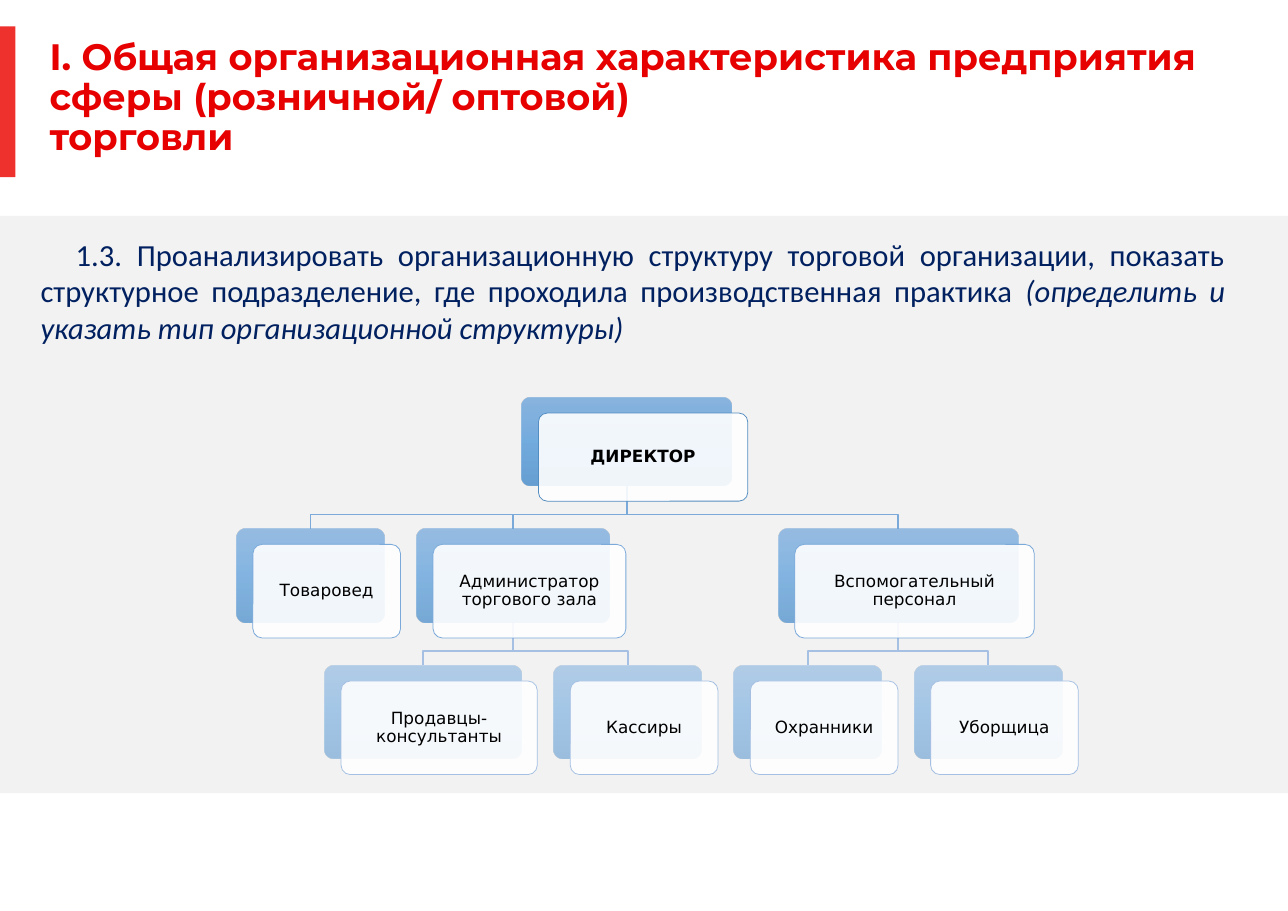
"""Build a slide with the organisation chart of a trading enterprise."""
from copy import deepcopy

from lxml import etree
from pptx import Presentation
from pptx.dml.color import RGBColor
from pptx.enum.shapes import MSO_SHAPE
from pptx.enum.text import MSO_ANCHOR, PP_ALIGN
from pptx.oxml.ns import qn
from pptx.util import Pt

RECTANGLE = MSO_SHAPE.RECTANGLE
ROUNDED = MSO_SHAPE.ROUNDED_RECTANGLE
MIDDLE = MSO_ANCHOR.MIDDLE
LEFT, CENTER, JUSTIFY = PP_ALIGN.LEFT, PP_ALIGN.CENTER, PP_ALIGN.JUSTIFY

BLACK = RGBColor(0x00, 0x00, 0x00)
WHITE = RGBColor(0xFF, 0xFF, 0xFF)
GREY = RGBColor(0xF2, 0xF2, 0xF2)
BAR_RED = RGBColor(0xEE, 0x31, 0x2C)
TITLE_RED = RGBColor(0xE6, 0x00, 0x00)
NAVY = RGBColor(0x00, 0x20, 0x60)
DIRECTOR_LINE = RGBColor(0x53, 0x8D, 0xC1)
MANAGER_LINE = RGBColor(0x7A, 0xA9, 0xDA)
STAFF_LINE = RGBColor(0xA5, 0xC0, 0xE3)
GRADIENT = [
    (0, RGBColor(0x71, 0xA6, 0xDB)),
    (0.5, RGBColor(0x55, 0x9B, 0xDB)),
    (1, RGBColor(0x44, 0x8A, 0xCA)),
]

SLIDE_WIDTH, SLIDE_HEIGHT = 841.68, 595.44
CARD_SHIFT_X, CARD_SHIFT_Y = 10.7, 10.2
BEND_ABOVE_CHILD = 9.4

LEVELS = [
    (259.8, 57.6, 80, DIRECTOR_LINE),
    (345.6, 61.2, 70, MANAGER_LINE),
    (434.9, 61.2, 50, STAFF_LINE),
]
POSITIONS = {
    "ДИРЕКТОР": (0, 341.2, 136.8, None),
    "Товаровед": (1, 154.6, 96.5, "ДИРЕКТОР"),
    "Администратор торгового зала": (1, 272.3, 126, "ДИРЕКТОР"),
    "Продавцы-консультанты": (2, 212.2, 128.2, "Администратор торгового зала"),
    "Кассиры": (2, 362, 96.5, "Администратор торгового зала"),
    "Вспомогательный персонал": (1, 508.7, 156.5, "ДИРЕКТОР"),
    "Охранники": (2, 479.7, 96.5, "Вспомогательный персонал"),
    "Уборщица": (2, 597.5, 96.5, "Вспомогательный персонал"),
}


def add_plain_shape(kind, left, top, width, height):
    shape = slide.shapes.add_shape(kind, Pt(left), Pt(top), Pt(width), Pt(height))
    shape.shadow.inherit = False
    shape.line.fill.background()
    return shape


def set_opacity(shape, percent):
    for color in shape._element.spPr.iter(qn("a:srgbClr")):
        etree.SubElement(color, qn("a:alpha")).set("val", str(percent * 1000))


presentation = Presentation()
presentation.slide_width = Pt(SLIDE_WIDTH)
presentation.slide_height = Pt(SLIDE_HEIGHT)
slide = presentation.slides.add_slide(presentation.slide_layouts[5])

for left, top, width, height, color in [
    (0, 141.1, SLIDE_WIDTH, 377.3, GREY),
    (0, 17.3, 10, 98.6, BAR_RED),
]:
    band = add_plain_shape(RECTANGLE, left, top, width, height)
    band.fill.solid()
    band.fill.fore_color.rgb = color

title = slide.shapes.title
title.left, title.top, title.width, title.height = Pt(32.4), Pt(25.2), Pt(762.5), Pt(78.5)
title_frame = title.text_frame
title_frame.text = (
    "I. Общая организационная характеристика предприятия "
    "сферы (розничной/ оптовой)\vторговли"
)
title_frame.word_wrap = True
title_frame.vertical_anchor = MIDDLE
title_frame.margin_left = title_frame.margin_right = 0
title_frame.margin_top = title_frame.margin_bottom = 0
paragraph = title_frame.paragraphs[0]
paragraph.alignment = LEFT
paragraph.line_spacing = 0.9
for run in paragraph.runs:
    run.font.name = "Montserrat"
    run.font.size = Pt(24)
    run.font.bold = True
    run.font.color.rgb = TITLE_RED

task = slide.shapes.add_textbox(Pt(19.4), Pt(150.5), Pt(788.4), Pt(80))
task.text_frame.word_wrap = True
paragraph = task.text_frame.paragraphs[0]
paragraph.alignment = JUSTIFY
paragraph._p.get_or_add_pPr().set("indent", str(Pt(23)))
for text, italic in [
    ("1.3. Проанализировать организационную структуру торговой организации, "
     "показать структурное подразделение, где проходила производственная практика ", False),
    ("(определить и указать тип организационной структуры)", True),
]:
    run = paragraph.add_run()
    run.text = text
    run.font.name = "Calibri"
    run.font.size = Pt(20)
    run.font.italic = italic
    run.font.color.rgb = NAVY

for level, left, width, parent in POSITIONS.values():
    if parent is None:
        continue
    parent_level, parent_left, parent_width, _ = POSITIONS[parent]
    parent_top, parent_height, _, _ = LEVELS[parent_level]
    child_top, _, _, line_color = LEVELS[level]
    start_x, end_x = parent_left + parent_width / 2, left + width / 2
    bend_y = child_top - BEND_ABOVE_CHILD
    builder = slide.shapes.build_freeform(Pt(start_x), Pt(parent_top + parent_height))
    builder.add_line_segments(
        [(Pt(start_x), Pt(bend_y)), (Pt(end_x), Pt(bend_y)), (Pt(end_x), Pt(child_top))],
        close=False,
    )
    branch = builder.convert_to_shape()
    branch.shadow.inherit = False
    branch.fill.background()
    branch.line.color.rgb = line_color
    branch.line.width = Pt(1)

for position, (level, left, width, parent) in POSITIONS.items():
    top, height, opacity, line_color = LEVELS[level]
    plate = add_plain_shape(ROUNDED, left, top, width, height)
    plate.adjustments[0] = 0.1
    plate.fill.gradient()
    plate.fill.gradient_angle = 270
    stop_list = plate._element.spPr.find(".//" + qn("a:gsLst"))
    stop_list.insert(1, deepcopy(stop_list[0]))
    for stop, (offset, color) in zip(plate.fill.gradient_stops, GRADIENT):
        stop.position = offset
        stop.color.rgb = color
    set_opacity(plate, opacity)

    card = add_plain_shape(ROUNDED, left + CARD_SHIFT_X, top + CARD_SHIFT_Y, width, height)
    card.adjustments[0] = 0.1
    card.fill.solid()
    card.fill.fore_color.rgb = WHITE
    set_opacity(card, 90)
    card.line.color.rgb = line_color
    card.line.width = Pt(0.5)
    frame = card.text_frame
    frame.text = position
    frame.word_wrap = True
    frame.vertical_anchor = MIDDLE
    frame.margin_left = frame.margin_right = Pt(3.6)
    frame.margin_top = frame.margin_bottom = Pt(3.6)
    paragraph = frame.paragraphs[0]
    paragraph.alignment = CENTER
    paragraph.line_spacing = 0.9
    font = paragraph.runs[0].font
    font.name = "DejaVu Sans"
    font.size = Pt(11)
    font.bold = parent is None
    font.color.rgb = BLACK

presentation.save("out.pptx")
